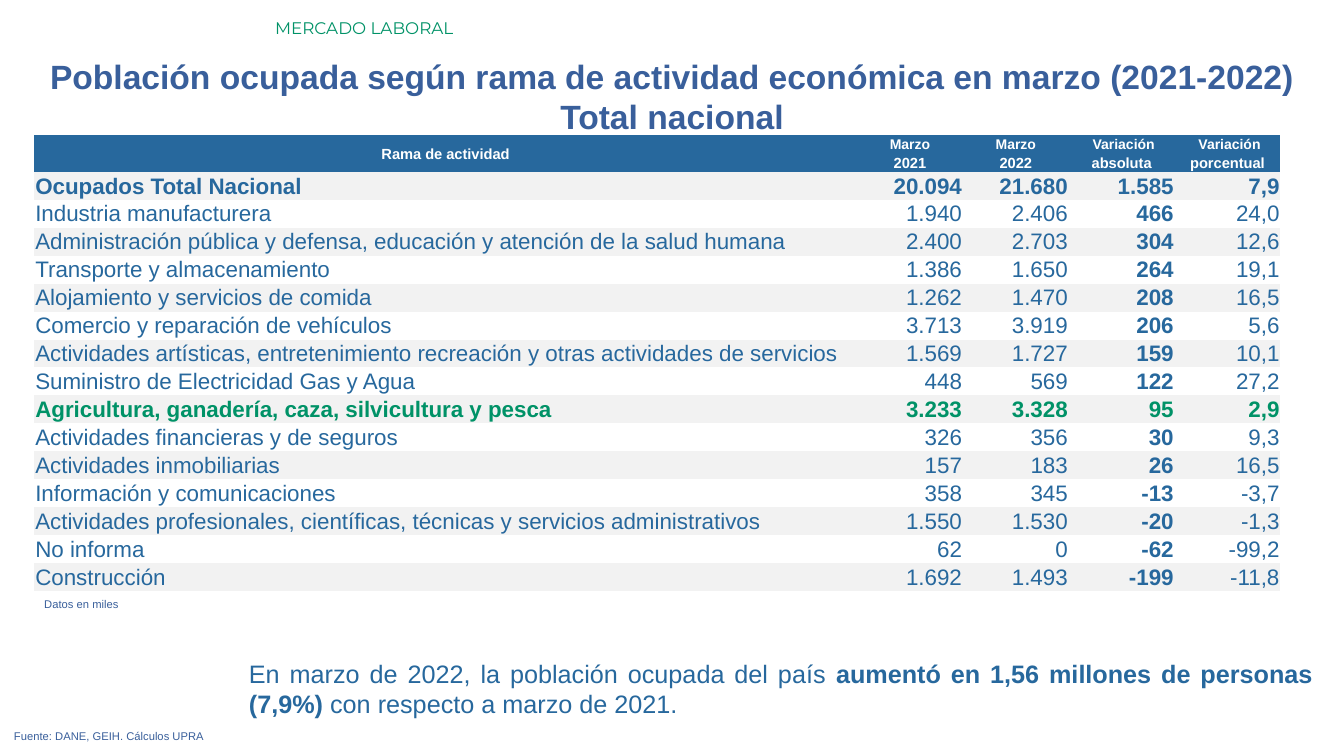
from pptx import Presentation
from pptx import util as u
from pptx.dml import color
from pptx.enum import text
from pptx.oxml import ns

BLUE, INDIGO, GREEN = "27689D", "395F9B", "009267"
WHITE, GRAY = "FFFFFF", "F2F2F2"
NO_STYLE = "{2D5ABB26-0587-4C30-8999-92F81FD0307C}"
LEFT, CENTER = text.PP_ALIGN.LEFT, text.PP_ALIGN.CENTER
RIGHT, JUSTIFY = text.PP_ALIGN.RIGHT, text.PP_ALIGN.JUSTIFY

COLUMN_WIDTHS = (8.16, 1.05, 1.05, 1.05, 1.05)
TABLE_HEIGHT, HEADER_ROW_HEIGHT = 4.52, 0.18
HEADERS = (
    (" Rama de actividad ", "Marzo", "Marzo", " Variación", " Variación"),
    ("", "2021", "2022", "absoluta", "porcentual"),
)
TOTAL = "Ocupados Total Nacional"
AGRICULTURE = "Agricultura, ganadería, caza, silvicultura y pesca"
BRANCHES = (
    (TOTAL, "20.094", "21.680", "1.585", "7,9"),
    ("Industria manufacturera", "1.940", "2.406", "466", "24,0"),
    ("Administración pública y defensa, educación y atención de la salud humana",
     "2.400", "2.703", "304", "12,6"),
    ("Transporte y almacenamiento", "1.386", "1.650", "264", "19,1"),
    ("Alojamiento y servicios de comida", "1.262", "1.470", "208", "16,5"),
    ("Comercio y reparación de vehículos", "3.713", "3.919", "206", "5,6"),
    ("Actividades artísticas, entretenimiento recreación y otras actividades de servicios",
     "1.569", "1.727", "159", "10,1"),
    ("Suministro de Electricidad Gas y Agua", "448", "569", "122", "27,2"),
    (AGRICULTURE, "3.233", "3.328", "95", "2,9"),
    ("Actividades financieras y de seguros", "326", "356", "30", "9,3"),
    ("Actividades inmobiliarias", "157", "183", "26", "16,5"),
    ("Información y comunicaciones", "358", "345", "-13", "-3,7"),
    ("Actividades profesionales, científicas, técnicas y servicios administrativos",
     "1.550", "1.530", "-20", "-1,3"),
    ("No informa", "62", "0", "-62", "-99,2"),
    ("Construcción", "1.692", "1.493", "-199", "-11,8"),
)


def rgb(value):
    return color.RGBColor.from_string(value)


def set_attributes(target, **values):
    for name, value in values.items():
        setattr(target, name, value)


def add_run(paragraph, content, size, hex_color, bold=False, name="Arial"):
    run = paragraph.add_run()
    run.text = content
    set_attributes(run.font, size=u.Pt(size), bold=bold, name=name)
    run.font.color.rgb = rgb(hex_color)


def add_note(slide, box, content, size, hex_color, align=JUSTIFY, name="Arial"):
    shape = slide.shapes.add_textbox(*map(u.Inches, box))
    shape.text_frame.word_wrap = True
    paragraph = shape.text_frame.paragraphs[0]
    paragraph.alignment = align
    for words, bold in content:
        add_run(paragraph, words, size, hex_color, bold, name)


def fill_title(title, lines):
    left, top, width, height = map(u.Inches, (0, 0.5, 13.33, 0.91))
    set_attributes(title, left=left, top=top, width=width, height=height)
    frame = title.text_frame
    set_attributes(frame, word_wrap=True, auto_size=text.MSO_AUTO_SIZE.NONE,
                   vertical_anchor=text.MSO_ANCHOR.TOP)
    for index, line in enumerate(lines):
        paragraph = frame.add_paragraph() if index else frame.paragraphs[0]
        paragraph.alignment = CENTER
        add_run(paragraph, line, 24, INDIGO, True)


def fill_cell(cell, content, align, size, hex_color, bold, background):
    margin = u.Inches(0.01)
    set_attributes(cell, margin_left=margin, margin_right=margin, margin_top=margin,
                   margin_bottom=0, vertical_anchor=text.MSO_ANCHOR.MIDDLE)
    if background:
        cell.fill.solid()
        cell.fill.fore_color.rgb = rgb(background)
    else:
        cell.fill.background()
    paragraph = cell.text_frame.paragraphs[0]
    paragraph.alignment = align
    add_run(paragraph, content, size, hex_color, bold)


def add_branch_table(slide):
    header_count = len(HEADERS)
    table = slide.shapes.add_table(
        header_count + len(BRANCHES), len(COLUMN_WIDTHS), u.Inches(0.34), u.Inches(1.34),
        u.Inches(sum(COLUMN_WIDTHS)), u.Inches(TABLE_HEIGHT)).table
    set_attributes(table, first_row=False, horz_banding=False)
    table._tbl.tblPr.find(ns.qn("a:tableStyleId")).text = NO_STYLE
    for column, width in zip(table.columns, COLUMN_WIDTHS):
        column.width = u.Inches(width)
    body_height = (TABLE_HEIGHT - header_count * HEADER_ROW_HEIGHT) / len(BRANCHES)
    for index, row in enumerate(table.rows):
        row.height = u.Inches(HEADER_ROW_HEIGHT if index < header_count else body_height)

    table.cell(0, 0).merge(table.cell(1, 0))
    for row, labels in enumerate(HEADERS):
        for column, label in enumerate(labels):
            if label:
                size = 10 if row == 0 and column else 10.5
                fill_cell(table.cell(row, column), label, CENTER, size, WHITE, True, BLUE)
    for row, values in enumerate(BRANCHES):
        highlighted = values[0] in (TOTAL, AGRICULTURE)
        hex_color = GREEN if values[0] == AGRICULTURE else BLUE
        background = None if row % 2 else GRAY
        for column, value in enumerate(values):
            fill_cell(table.cell(row + header_count, column), value, RIGHT if column else LEFT,
                      16, hex_color, highlighted or column == 3, background)


def main():
    presentation = Presentation()
    set_attributes(presentation, slide_width=u.Inches(13.33), slide_height=u.Inches(7.5))
    slide = presentation.slides.add_slide(presentation.slide_layouts[5])
    add_note(slide, (2.63, 0.13, 10.7, 0.3), [("MERCADO LABORAL", False)],
             12, GREEN, LEFT, "Montserrat")
    fill_title(slide.shapes.title, (
        "Población ocupada según rama de actividad económica en marzo (2021-2022)",
        "Total nacional"))
    add_note(slide, (2.37, 6.48, 10.75, 0.71), [
        ("En marzo de 2022, la población ocupada del país ", False),
        ("aumentó en 1,56 millones de personas (7,9%) ", True),
        ("con respecto a marzo de 2021.", False)], 18, BLUE)
    add_note(slide, (0.04, 7.19, 12.91, 0.24),
             [("Fuente: DANE, GEIH. Cálculos UPRA", False)], 8, INDIGO)
    add_note(slide, (0.34, 5.88, 12.91, 0.24), [("Datos en miles", False)], 8, INDIGO)
    add_branch_table(slide)
    presentation.save("out.pptx")


if __name__ == "__main__":
    main()
